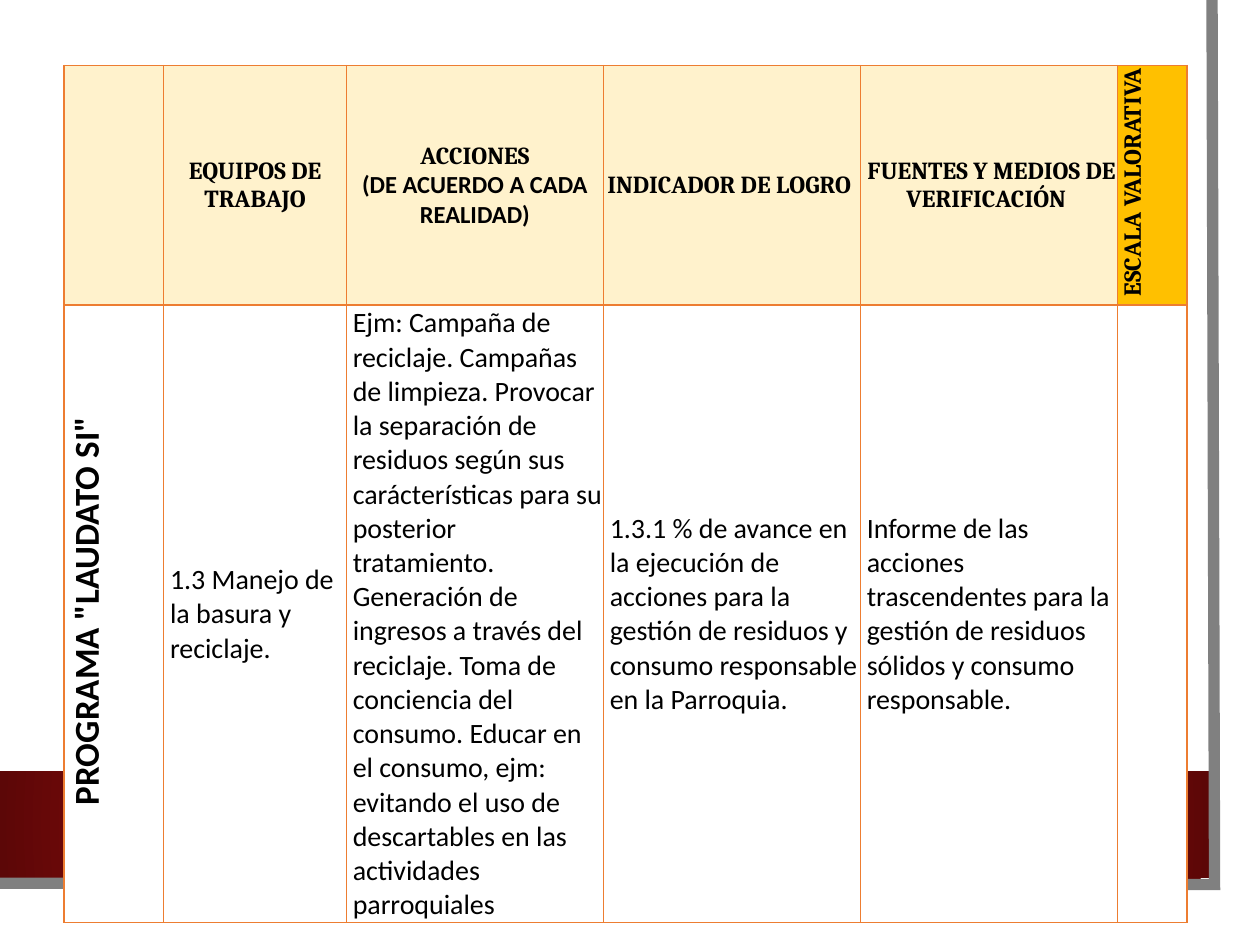
from dataclasses import dataclass

from lxml import etree
from pptx import Presentation
from pptx.dml.color import RGBColor as Color
from pptx.enum.shapes import MSO_SHAPE as Shape
from pptx.enum.text import MSO_ANCHOR as Anchor, PP_ALIGN as Align
from pptx.oxml import parse_xml
from pptx.oxml.ns import nsdecls, qn
from pptx.util import Inches, Pt


@dataclass(frozen=True)
class Theme:
    white: str = "FFFFFF"
    black: str = "000000"
    red: str = "B80E0F"
    dark_red: str = "5C0707"
    gray: str = "808080"
    orange: str = "ED7D31"
    cream: str = "FFF2CC"
    amber: str = "FFC000"
    body_font: str = "Calibri"
    header_font: str = "Cambria"
    header_size: int = 14
    body_size: int = 16
    program_size: int = 20
    border_width: float = 1
    frame_width: float = 6.5


@dataclass
class Cell:
    """Content and format of one table cell; lines are (text, font) pairs."""
    lines: tuple
    fill: str
    size: int
    bold: bool = False
    centered: bool = False
    vertical: bool = False
    left_margin: float = 0.01


class SlideBuilder:
    def __init__(self, slide, theme):
        self.slide = slide
        self.theme = theme

    def rectangle(self, left, top, width, height, color):
        shape = self.slide.shapes.add_shape(
            Shape.RECTANGLE, Inches(left), Inches(top), Inches(width), Inches(height))
        shape.shadow.inherit = False
        shape.fill.solid()
        shape.fill.fore_color.rgb = Color.from_string(color)
        shape.line.fill.background()
        return shape

    def radial_band(self, left, top, width, height, inner, outer):
        shape = self.rectangle(left, top, width, height, outer)
        gradient = parse_xml(
            f'<a:gradFill {nsdecls("a")} rotWithShape="1"><a:gsLst>'
            f'<a:gs pos="34000"><a:srgbClr val="{inner}"/></a:gs>'
            f'<a:gs pos="100000"><a:srgbClr val="{outer}"/></a:gs></a:gsLst>'
            '<a:path path="circle"><a:fillToRect l="50000" t="50000" r="50000" b="50000"/>'
            '</a:path></a:gradFill>')
        properties = shape.element.spPr
        properties.replace(properties.find(qn("a:solidFill")), gradient)

    def open_line(self, points, color, width):
        start, *others = [(Inches(x), Inches(y)) for x, y in points]
        builder = self.slide.shapes.build_freeform(*start, scale=1.0)
        builder.add_line_segments(others, close=False)
        shape = builder.convert_to_shape()
        shape.shadow.inherit = False
        shape.fill.background()
        shape.line.color.rgb = Color.from_string(color)
        shape.line.width = Pt(width)
        line = shape.element.spPr.find(qn("a:ln"))
        etree.SubElement(line, qn("a:miter"), lim="800000")

    def table(self, left, top, column_widths, row_heights, rows):
        frame = self.slide.shapes.add_table(
            len(row_heights), len(column_widths), Inches(left), Inches(top),
            Inches(sum(column_widths)), Inches(sum(row_heights)))
        table = frame.table
        table.first_row = table.horz_banding = False
        for column, width in zip(table.columns, column_widths):
            column.width = Inches(width)
        for row, height, contents in zip(table.rows, row_heights, rows):
            row.height = Inches(height)
            for cell, content in zip(row.cells, contents):
                self.fill_cell(cell, content)

    def fill_cell(self, cell, content):
        cell.fill.solid()
        cell.fill.fore_color.rgb = Color.from_string(content.fill)
        cell.vertical_anchor = Anchor.MIDDLE
        cell.margin_left = Inches(content.left_margin)
        cell.margin_top = cell.margin_right = Inches(0.01)
        cell.margin_bottom = 0
        self.border_cell(cell, content.vertical)
        frame = cell.text_frame
        for index, (text, font) in enumerate(content.lines):
            paragraph = frame.add_paragraph() if index else frame.paragraphs[0]
            paragraph.alignment = Align.CENTER if content.centered else Align.LEFT
            run = paragraph.add_run()
            run.text = text
            run.font.name = font
            run.font.size = Pt(content.size)
            run.font.bold = content.bold
            run.font.color.rgb = Color.from_string(self.theme.black)

    def border_cell(self, cell, vertical):
        properties = cell._tc.get_or_add_tcPr()
        if vertical:
            properties.set("vert", "vert270")
        width = Pt(self.theme.border_width)
        # Borders must come before the fill
        for position, side in enumerate(("lnL", "lnR", "lnT", "lnB")):
            properties.insert(position, parse_xml(
                f'<a:{side} {nsdecls("a")} w="{width}"><a:solidFill>'
                f'<a:srgbClr val="{self.theme.orange}"/></a:solidFill></a:{side}>'))


def main():
    theme = Theme()
    presentation = Presentation()
    presentation.slide_width, presentation.slide_height = Inches(10), Inches(7.5)
    slide = presentation.slides.add_slide(presentation.slide_layouts[6])
    builder = SlideBuilder(slide, theme)

    # Background: white sheet, red band and gray edge
    builder.rectangle(0, 0, 9.83, 7.27, theme.white)
    builder.radial_band(0, 6.12, 9.6, 0.85, theme.red, theme.dark_red)
    builder.open_line([(9.62, 0), (9.64, 7.02), (-0.02, 7.01)],
                      theme.gray, theme.frame_width)

    def header(*lines, fill=theme.cream, vertical=False):
        return Cell(lines, fill, theme.header_size, bold=True, centered=True,
                    vertical=vertical)

    def body(text):
        return Cell(((text, theme.body_font),), theme.white, theme.body_size,
                    left_margin=0.05)

    # Table: headings, then the program row
    headings = [
        header(),
        header(("EQUIPOS DE TRABAJO", theme.header_font)),
        header(("ACCIONES", theme.header_font),
               ("(DE ACUERDO A CADA REALIDAD)", theme.body_font)),
        header(("INDICADOR DE LOGRO ", theme.header_font)),
        header((" FUENTES Y MEDIOS DE VERIFICACIÓN ", theme.header_font)),
        header((" ESCALA VALORATIVA", theme.header_font),
               fill=theme.amber, vertical=True),
    ]
    program = [
        Cell((('PROGRAMA "LAUDATO SI"', theme.body_font),), theme.white,
             theme.program_size, bold=True, centered=True, vertical=True,
             left_margin=0.05),
        body("1.3 Manejo de la basura y reciclaje."),
        body("Ejm: Campaña de reciclaje. Campañas de limpieza. Provocar la "
             "separación de residuos según sus carácterísticas para su posterior "
             "tratamiento. Generación de ingresos a través del reciclaje. Toma de "
             "conciencia del consumo. Educar en el consumo, ejm: evitando el uso de "
             "descartables en las actividades parroquiales"),
        body("1.3.1 % de avance en la ejecución de acciones para la gestión de "
             "residuos y consumo responsable en la Parroquia."),
        body("Informe de las acciones trascendentes para la gestión de residuos "
             "sólidos y consumo responsable."),
        Cell((), theme.white, theme.body_size),
    ]
    builder.table(0.51, 0.52, [0.79, 1.45, 2.04, 2.04, 2.04, 0.55], [1.9, 4.9],
                  [headings, program])

    presentation.save("out.pptx")


if __name__ == "__main__":
    main()
